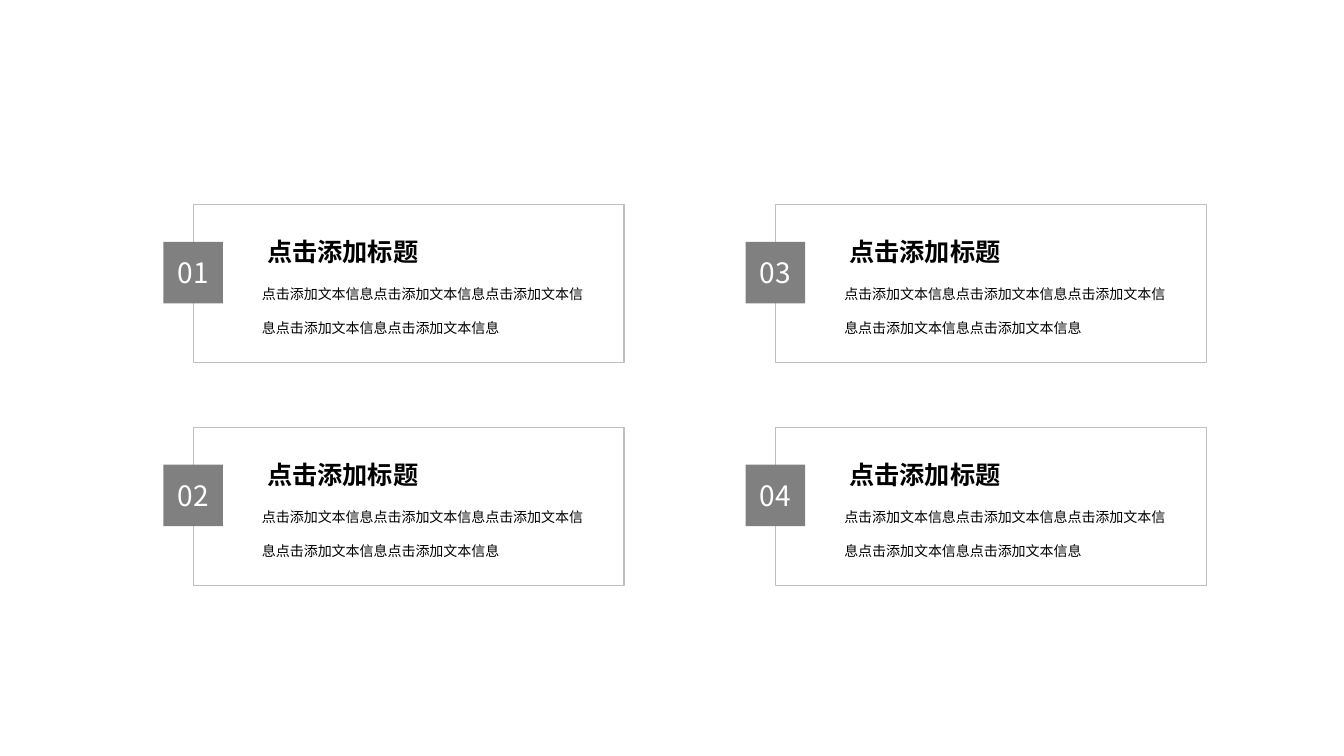
from lxml.etree import SubElement
from pptx import Presentation
from pptx.dml.color import RGBColor
from pptx.enum.shapes import MSO_SHAPE
from pptx.enum.text import MSO_ANCHOR, MSO_AUTO_SIZE, PP_ALIGN
from pptx.oxml.ns import qn
from pptx.util import Inches, Pt

FONT = "Noto Sans CJK SC"
BLACK = RGBColor(0x00, 0x00, 0x00)
WHITE = RGBColor(0xFF, 0xFF, 0xFF)
GRAY = RGBColor(0x80, 0x80, 0x80)
LIGHT_GRAY = RGBColor(0xBF, 0xBF, 0xBF)

HEADING = "点击添加标题"
BODY = "点击添加文本信息" * 5
COLUMN_STEP, ROW_STEP = 5.775, 2.21


def write(box, text, size, color, align, spacing=1.0, bold=False):
    """Fill the box with one paragraph, set in FONT for Latin and Chinese."""
    box.text_frame.word_wrap = True
    paragraph = box.text_frame.paragraphs[0]
    paragraph.text = text
    paragraph.alignment = align
    paragraph.line_spacing = spacing
    font = paragraph.font
    font.name, font.size, font.bold = FONT, Pt(size), bold
    font.color.rgb = color
    defaults = paragraph._p.pPr.find(qn("a:defRPr"))
    SubElement(defaults, qn("a:ea")).set("typeface", FONT)


prs = Presentation()
prs.slide_width, prs.slide_height = Inches(13.33), Inches(7.5)
slide = prs.slides.add_slide(prs.slide_layouts[6])

for index in range(4):
    column, row = divmod(index, 2)
    x, y = 1.62 + column * COLUMN_STEP, 2.03 + row * ROW_STEP
    card = slide.shapes.add_group_shape().shapes

    frame = card.add_shape(MSO_SHAPE.RECTANGLE, Inches(x + 0.3), Inches(y),
                           Inches(4.27), Inches(1.57))
    frame.shadow.inherit = False
    frame.fill.background()
    frame.line.color.rgb = LIGHT_GRAY
    frame.line.width = Pt(1)

    number = card.add_shape(MSO_SHAPE.RECTANGLE, Inches(x), Inches(y + 0.37),
                            Inches(0.59), Inches(0.61))
    number.shadow.inherit = False
    number.fill.solid()
    number.fill.fore_color.rgb = GRAY
    number.line.fill.background()
    number.text_frame.vertical_anchor = MSO_ANCHOR.MIDDLE
    write(number, f"{index + 1:02}", 20, WHITE, PP_ALIGN.CENTER)

    body = card.add_textbox(Inches(x + 0.88), Inches(y + 0.59),
                            Inches(3.51), Inches(0.77))
    body.text_frame.auto_size = MSO_AUTO_SIZE.SHAPE_TO_FIT_TEXT
    write(body, BODY, 10, BLACK, PP_ALIGN.LEFT, spacing=2.0)

    heading = card.add_textbox(Inches(x + 0.93), Inches(y + 0.21),
                               Inches(2.58), Inches(0.46))
    heading.text_frame.auto_size = MSO_AUTO_SIZE.SHAPE_TO_FIT_TEXT
    write(heading, HEADING, 18, BLACK, PP_ALIGN.JUSTIFY, spacing=1.2, bold=True)

prs.save("out.pptx")
